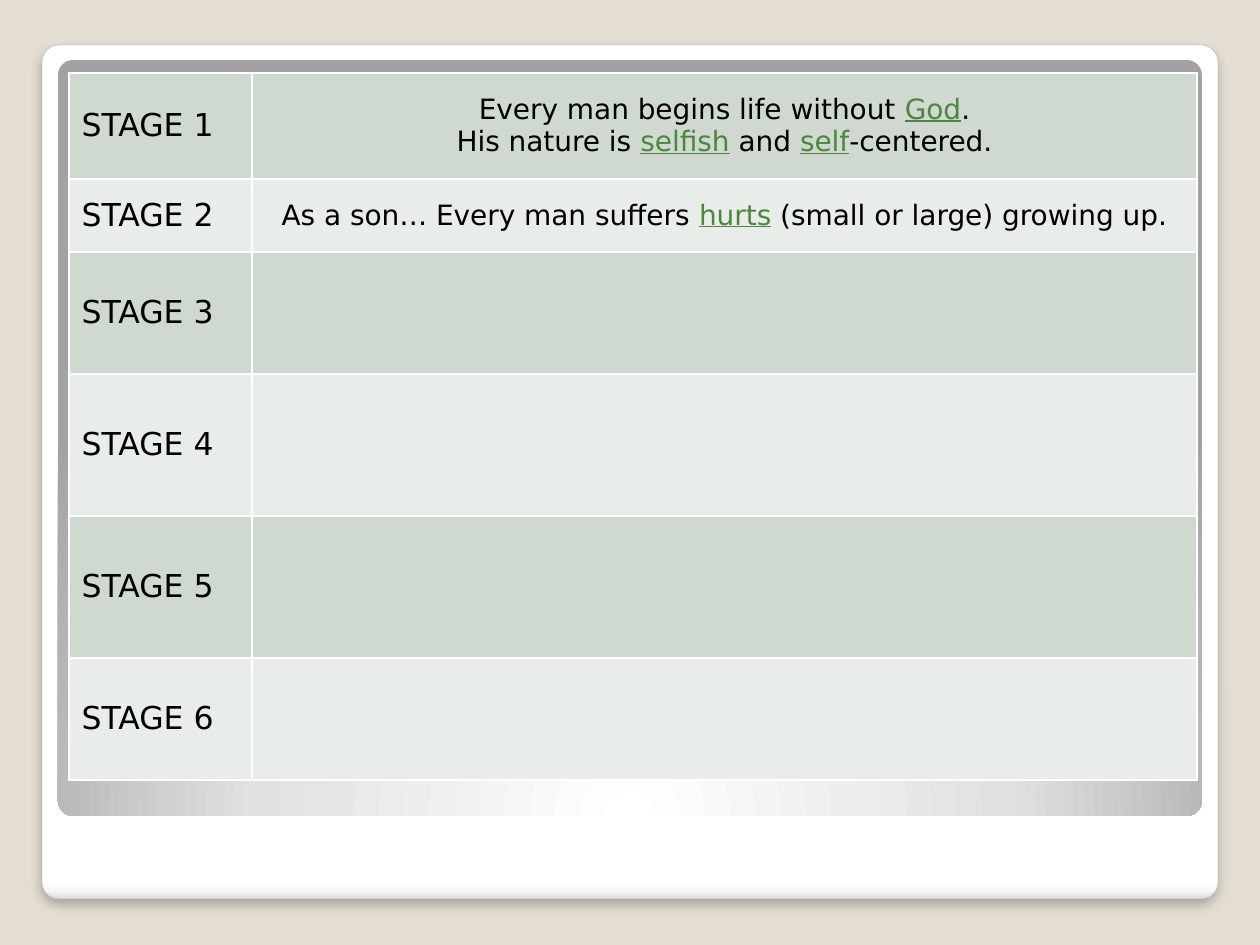
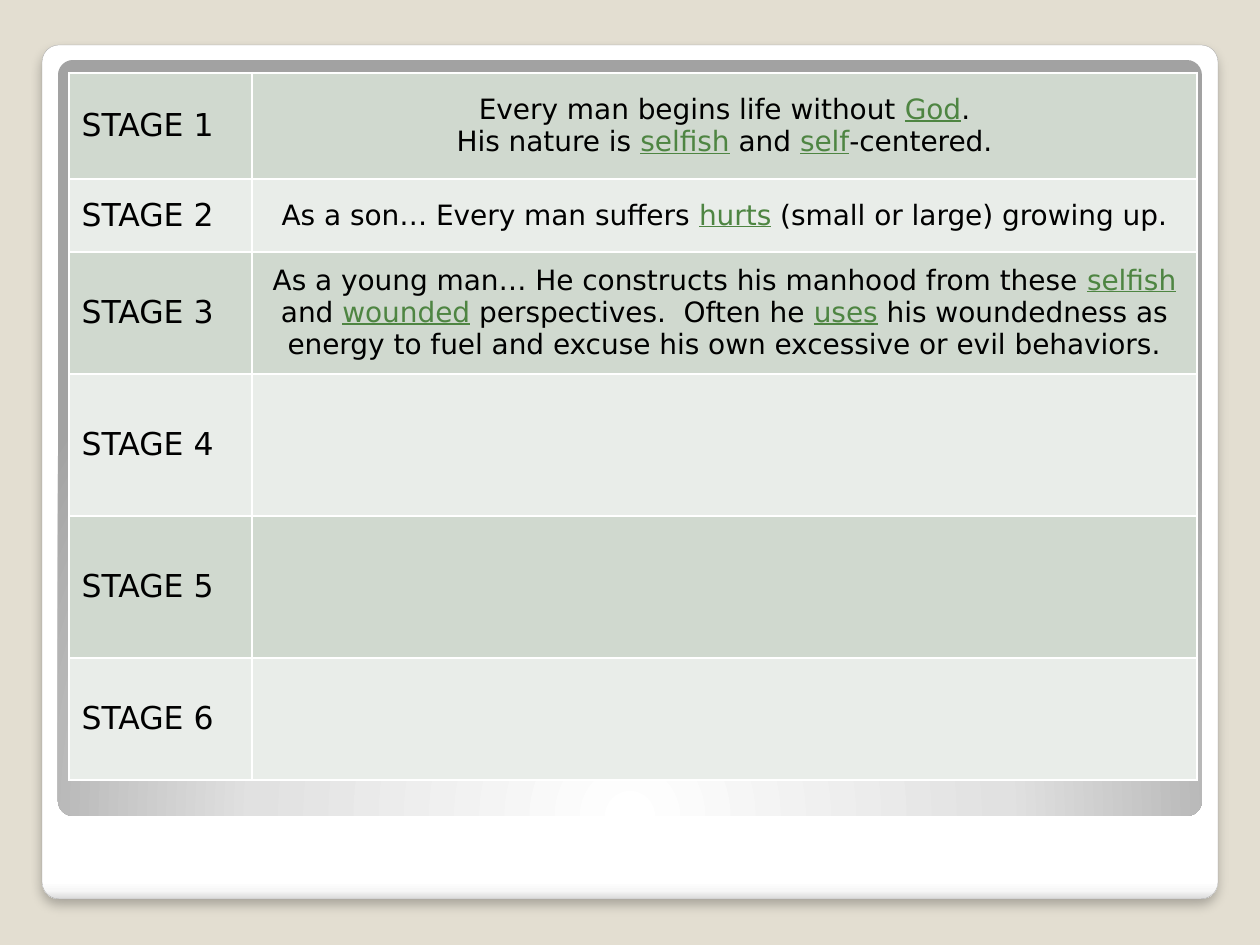
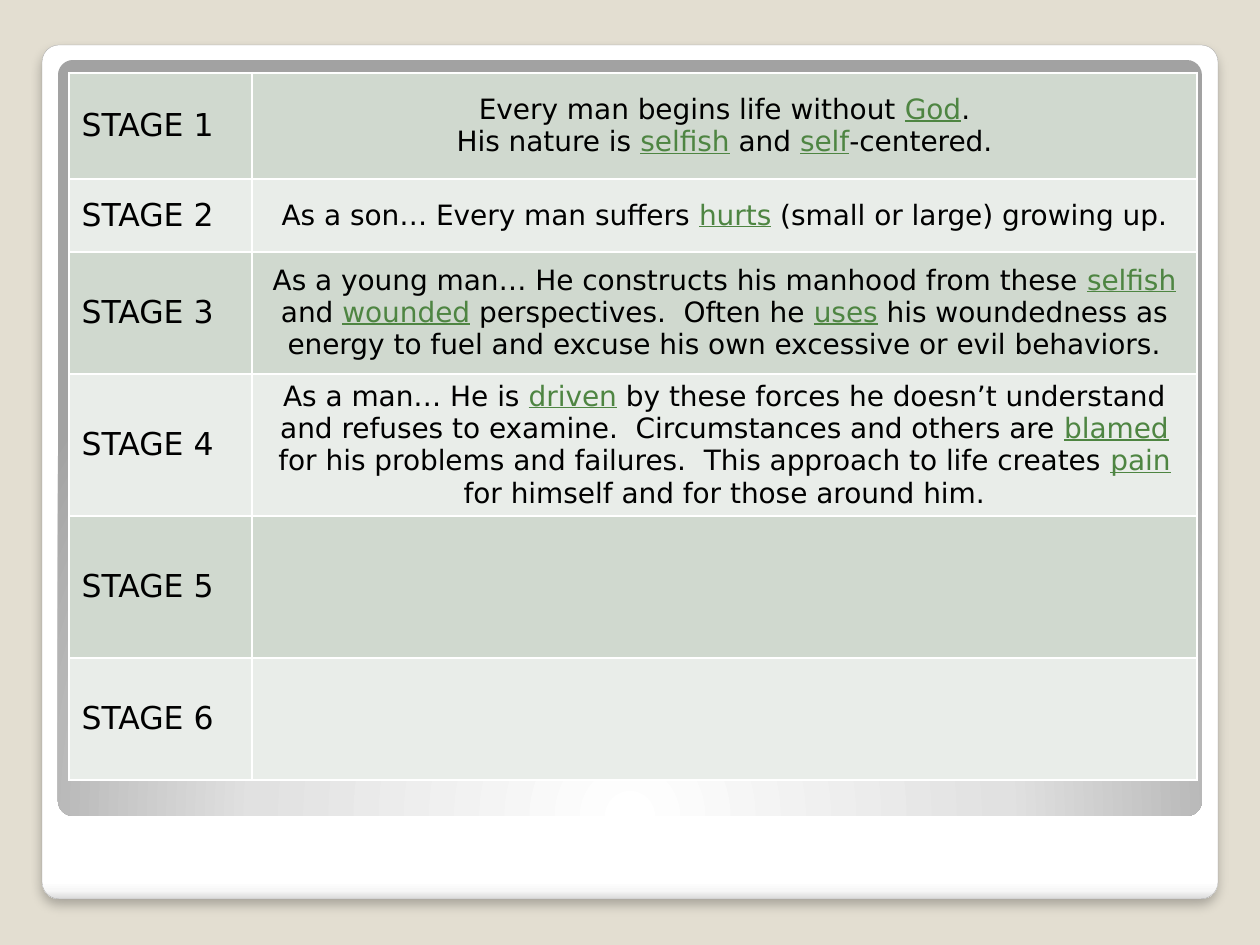
from pptx import Presentation
from pptx.dml.color import RGBColor
from pptx.enum.shapes import MSO_SHAPE
from pptx.enum.text import MSO_ANCHOR, PP_ALIGN
from pptx.oxml import parse_xml
from pptx.oxml.ns import nsdecls, qn
from pptx.util import Emu, Pt

FONT = "DejaVu Sans"
HUES = {
    "back": "E3DED1", "white": "FFFFFF", "pale": "F7F7F7", "edge": "DADADA",
    "line": "A4A4A4", "mid": "E1E1E1", "dark": "A2A2A2", "black": "000000",
    "green": "4E8542", "odd": "D0D9CF", "even": "E9EDE9",
}
CARD = (42, 45, 1176, 854)
PANEL = (58, 60, 1144, 756)
GRID = (69, 73, 1128, 707)
LABEL = 183
ROWS = (106, 73, 122, 142, 142, 122)
STAGES = (
    ("Every man begins life without *God*.",
     "His nature is *selfish* and *self*-centered."),
    ("As a son… Every man suffers *hurts* (small or large) growing up.",),
    ("As a young man… He constructs his manhood from these *selfish* and "
     "*wounded* perspectives.  Often he *uses* his woundedness as energy to "
     "fuel and excuse his own excessive or evil behaviors.",),
    ("As a man… He is *driven* by these forces he doesn’t understand and "
     "refuses to examine.  Circumstances and others are *blamed* for his "
     "problems and failures.  This approach to life creates *pain* for "
     "himself and for those around him.",),
)


def px(size):
    return Emu(round(size * 914400 / 126))


def hue(name):
    return RGBColor.from_string(HUES[name])


def shade(shape, stops, path):
    marks = "".join(
        f'<a:gs pos="{pos * 1000}"><a:srgbClr val="{HUES[name]}"/></a:gs>'
        for pos, name in stops)
    shape.fill.gradient()
    props = shape.element.spPr
    props.replace(props.find(qn("a:gradFill")), parse_xml(
        f'<a:gradFill {nsdecls("a")} rotWithShape="1">'
        f'<a:gsLst>{marks}</a:gsLst>{path}</a:gradFill>'))


def add_round(slide, box, stops, path):
    shape = slide.shapes.add_shape(MSO_SHAPE.ROUNDED_RECTANGLE, *map(px, box))
    shape.adjustments[0] = 0.02
    shape.shadow.inherit = False
    shape.line.fill.background()
    shade(shape, stops, path)
    return shape


def add_card(slide, box):
    card = add_round(
        slide, box,
        ((0, "white"), (98, "white"), (99, "pale"), (100, "edge")),
        '<a:lin ang="5400000" scaled="0"/>')
    card.line.color.rgb = hue("line")
    card.line.width = Pt(0.16)
    card.element.spPr.find(qn("a:effectLst")).append(parse_xml(
        f'<a:outerShdw {nsdecls("a")} blurRad="{Pt(6)}" dist="{Pt(4)}" '
        f'dir="5400000" rotWithShape="0"><a:srgbClr val="{HUES["black"]}">'
        '<a:alpha val="25000"/></a:srgbClr></a:outerShdw>'))


def add_panel(slide, box):
    add_round(
        slide, box, ((0, "white"), (55, "mid"), (100, "dark")),
        '<a:path path="circle"><a:fillToRect l="50000" t="175000" '
        'r="50000" b="-75000"/></a:path>')


def style(cell, name):
    cell.fill.solid()
    cell.fill.fore_color.rgb = hue(name)
    cell.vertical_anchor = MSO_ANCHOR.MIDDLE
    props = cell._tc.get_or_add_tcPr()
    for spot, side in enumerate("LRTB"):
        props.insert(spot, parse_xml(
            f'<a:ln{side} {nsdecls("a")} w="{Pt(1)}"><a:solidFill>'
            f'<a:srgbClr val="{HUES["white"]}"/></a:solidFill></a:ln{side}>'))


def write(cell, lines, size, align):
    frame = cell.text_frame
    for spot, line in enumerate(lines):
        para = frame.add_paragraph() if spot else frame.paragraphs[0]
        para.alignment = align
        para.font.name = FONT
        para.font.size = Pt(size)
        for turn, part in enumerate(line.split("*")):
            run = para.add_run()
            run.text = part
            key = turn % 2 == 1
            run.font.color.rgb = hue("green" if key else "black")
            if key:
                run.font.underline = True


def add_grid(slide, box, shown):
    table = slide.shapes.add_table(len(ROWS), 2, *map(px, box)).table
    table.first_row = table.horz_banding = False
    for col, width in zip(table.columns, (LABEL, box[2] - LABEL)):
        col.width = px(width)
    for spot, height in enumerate(ROWS):
        table.rows[spot].height = px(height)
        label, body = table.cell(spot, 0), table.cell(spot, 1)
        for cell in (label, body):
            style(cell, "even" if spot % 2 else "odd")
        write(label, (f"STAGE {spot + 1}",), 18, PP_ALIGN.LEFT)
        if spot < shown:
            write(body, STAGES[spot], 16, PP_ALIGN.CENTER)


def main():
    deck = Presentation()
    deck.slide_width, deck.slide_height = px(1260), px(945)
    back = deck.slide_master.background.fill
    back.solid()
    back.fore_color.rgb = hue("back")
    for shown in (2, 3, 4):
        slide = deck.slides.add_slide(deck.slide_layouts[6])
        add_card(slide, CARD)
        add_panel(slide, PANEL)
        add_grid(slide, GRID, shown)
    deck.save("out.pptx")


if __name__ == "__main__":
    main()
